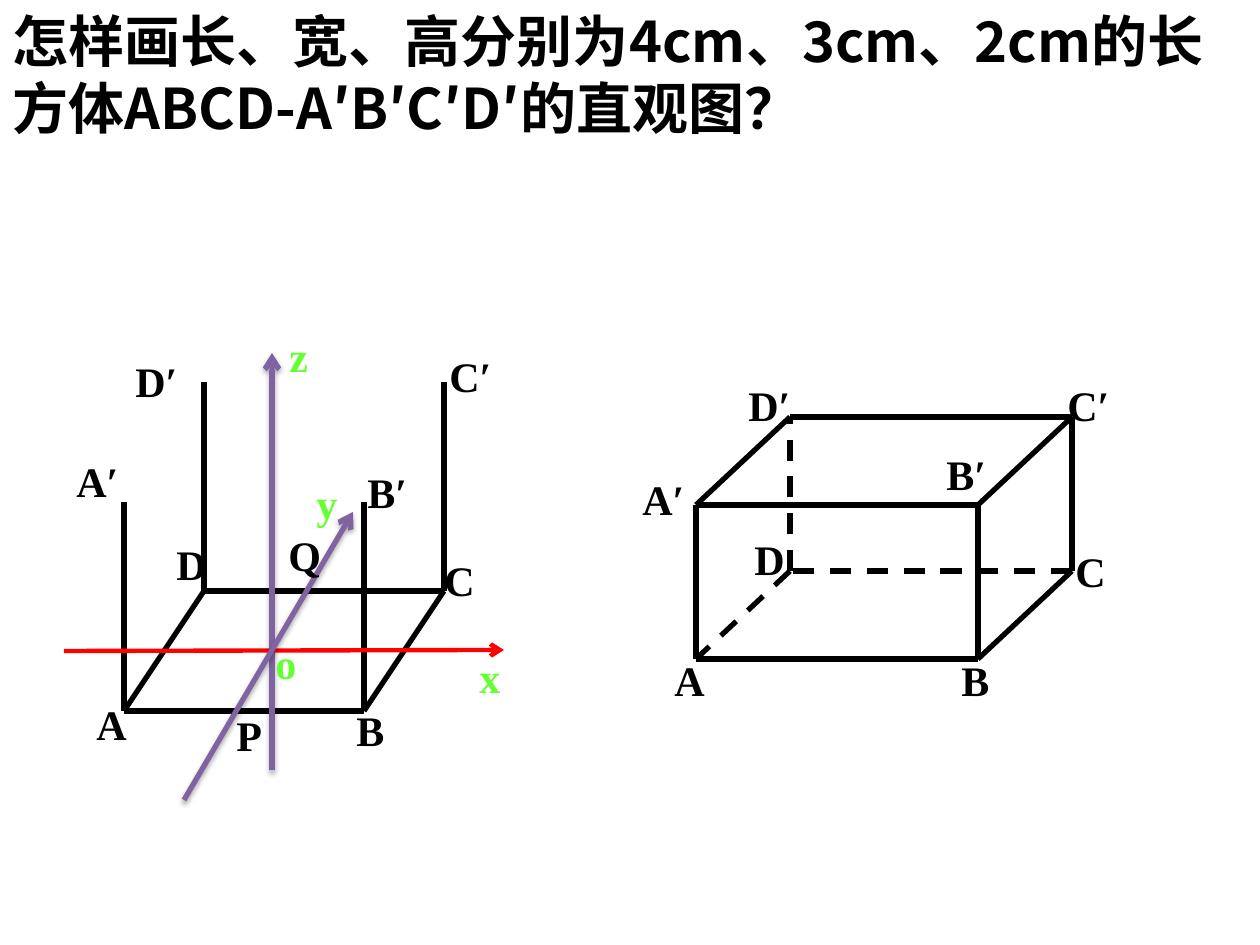
import dataclasses

import pptx
import pptx.dml.color
import pptx.enum.dml
import pptx.enum.shapes
import pptx.enum.text
import pptx.oxml
import pptx.oxml.ns
import pptx.util

SCALE = 914400 // 126  # EMU in one px


@dataclasses.dataclass(frozen=True)
class Theme:
    ink: str = "000000"
    axis_name: str = "66FF33"
    red_axis: str = "FF0000"
    purple_axis: str = "8064A2"
    title_font: str = "Noto Sans CJK SC"
    label_font: str = "Times New Roman"
    title_size: int = 32
    label_size: int = 24
    edge_width: float = 3
    red_width: float = 2.5


THEME = Theme()

# Name: left, top, width, height of each label box
DRAWN_LABELS = {
    "A": (84, 692, 81, 69), "B": (344, 698, 81, 68),
    "C": (432, 548, 79, 89), "D": (164, 532, 79, 89),
    "A′": (64, 449, 100, 73), "B′": (355, 460, 106, 62),
    "C′": (437, 344, 103, 59), "D′": (123, 349, 115, 63),
    "P": (224, 703, 79, 66), "Q": (276, 523, 79, 89),
}
AXIS_LABELS = {
    "x": (467, 645, 81, 69), "y": (304, 471, 81, 89),
    "z": (277, 324, 81, 69), "o": (263, 631, 81, 60),
}
CUBOID_LABELS = {
    "A": (662, 648, 95, 66), "B": (949, 648, 95, 66),
    "C": (1063, 539, 95, 66), "D": (742, 527, 95, 66),
    "A′": (630, 467, 123, 66), "B′": (934, 442, 106, 66),
    "C′": (1055, 373, 117, 66), "D′": (736, 373, 110, 66),
}


def px(length):
    return pptx.util.Emu(length * SCALE)


def place(box, left, top, width, height):
    box.left, box.top, box.width, box.height = map(px, (left, top, width, height))


def write(box, text, *, font, size, color, align):
    frame = box.text_frame
    frame.word_wrap = True
    frame.vertical_anchor = pptx.enum.text.MSO_ANCHOR.TOP
    para = frame.paragraphs[0]
    para.alignment = align
    span = para.add_run()
    span.text = text
    span.font.name = font
    span.font.size = pptx.util.Pt(size)
    span.font.bold = True
    span.font.color.rgb = pptx.dml.color.RGBColor.from_string(color)
    east_asian = pptx.oxml.parse_xml(
        f'<a:ea {pptx.oxml.ns.nsdecls("a")} typeface="{font}"/>')
    span.font._element.append(east_asian)


def add_title(page, text):
    title = page.shapes.title
    place(title, 0, 0, 1260, 149)
    write(title, text, font=THEME.title_font, size=THEME.title_size,
          color=THEME.ink, align=pptx.enum.text.PP_ALIGN.LEFT)
    title.text_frame.auto_size = pptx.enum.text.MSO_AUTO_SIZE.SHAPE_TO_FIT_TEXT


def add_labels(page, labels, color=THEME.ink):
    for name, bounds in labels.items():
        box = page.shapes.add_textbox(*map(px, bounds))
        write(box, name, font=THEME.label_font, size=THEME.label_size,
              color=color, align=pptx.enum.text.PP_ALIGN.JUSTIFY)


def add_line(page, start, end, *, color=THEME.ink, width=THEME.edge_width,
             dashed=False, arrow=False, shadow=False):
    line = page.shapes.add_connector(
        pptx.enum.shapes.MSO_CONNECTOR.STRAIGHT, *map(px, (*start, *end)))
    line.line.width = pptx.util.Pt(width)
    line.line.color.rgb = pptx.dml.color.RGBColor.from_string(color)
    if dashed:
        line.line.dash_style = pptx.enum.dml.MSO_LINE.DASH
    namespace = pptx.oxml.ns.nsdecls("a")
    if arrow:
        line.line._get_or_add_ln().append(
            pptx.oxml.parse_xml(f'<a:tailEnd {namespace} type="arrow"/>'))
    effect = ""
    if shadow:
        effect = (
            f'<a:outerShdw blurRad="{pptx.util.Pt(3.1)}" dist="{pptx.util.Pt(1.8)}" '
            'dir="5400000" rotWithShape="0"><a:srgbClr val="000000">'
            '<a:alpha val="35000"/></a:srgbClr></a:outerShdw>')
    line._element.spPr.append(pptx.oxml.parse_xml(
        f'<a:effectLst {namespace}>{effect}</a:effectLst>'))


def add_prism(page, corner, length, depth, height, *, closed):
    """Oblique box from its front left base corner; closed adds the top and hides edges at D."""
    left, base = corner
    right_shift, rise = depth
    a, b = (left, base), (left + length, base)
    d, c = [(x + right_shift, y - rise) for x, y in (a, b)]
    bottom = [a, b, c, d]
    top = [(x, y - height) for x, y in bottom]
    for index in range(4):
        following = (index + 1) % 4
        add_line(page, bottom[index], bottom[following],
                 dashed=closed and 3 in (index, following))
        add_line(page, bottom[index], top[index], dashed=closed and index == 3)
        if closed:
            add_line(page, top[index], top[following])


def add_axes(page):
    purple = dict(color=THEME.purple_axis, arrow=True, shadow=True)
    add_line(page, (272, 770), (272, 353), **purple)
    add_line(page, (64, 651), (504, 650), color=THEME.red_axis,
             width=THEME.red_width, arrow=True)
    add_line(page, (184, 800), (353, 512), **purple)


def main():
    deck = pptx.Presentation()
    deck.slide_width, deck.slide_height = px(1260), px(945)
    page = deck.slides.add_slide(deck.slide_layouts.get_by_name("Title Only"))
    add_title(page, "怎样画长、宽、高分别为4cm、3cm、2cm的长方体ABCD-A′B′C′D′的直观图？")
    add_prism(page, (124, 711), 240, (80, 120), 209, closed=False)
    add_axes(page)
    add_labels(page, DRAWN_LABELS)
    add_labels(page, AXIS_LABELS, THEME.axis_name)
    add_prism(page, (696, 659), 282, (94, 88), 154, closed=True)
    add_labels(page, CUBOID_LABELS)
    deck.save("out.pptx")


if __name__ == "__main__":
    main()
